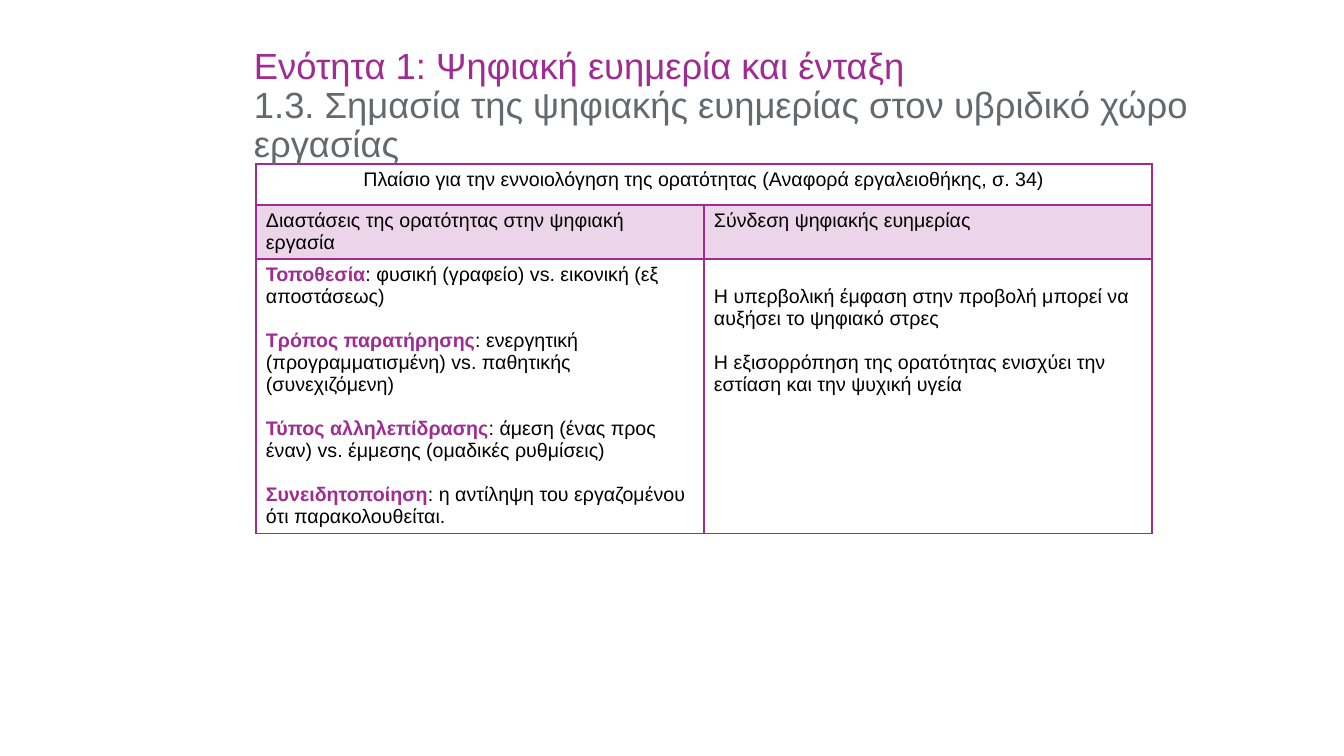
from lxml import etree
from pptx import Presentation
from pptx import util as u
from pptx.dml.color import RGBColor
from pptx.enum import text
from pptx.oxml.ns import qn

PX = 914400 / 100.8
PURPLE, GREY, BLACK, WHITE, LILAC = "A02B93", "636A6F", "000000", "FFFFFF", "ECD5E9"


def px(length):
    return u.Emu(round(length * PX))


def add_run(paragraph, wording, size, color, bold=False):
    run = paragraph.add_run()
    run.text = wording
    font_values = {"name": "Arial", "size": u.Pt(size), "bold": bold}
    for key, value in font_values.items():
        setattr(run.font, key, value)
    run.font.color.rgb = RGBColor.from_string(color)


prs = Presentation()
prs.slide_width, prs.slide_height = px(1344), px(756)
slide = prs.slides.add_slide(prs.slide_layouts[6])

# Visibility framework: each cell holds paragraphs of (purple term, plain wording)
framework = [
    [[("", "Πλαίσιο για την εννοιολόγηση της ορατότητας (Αναφορά εργαλειοθήκης, σ. 34)")], []],
    [[("", "Διαστάσεις της ορατότητας στην ψηφιακή εργασία")],
     [("", "Σύνδεση ψηφιακής ευημερίας")]],
    [[("Τοποθεσία", ": φυσική (γραφείο) vs. εικονική (εξ αποστάσεως)"),
      ("Τρόπος παρατήρησης", ": ενεργητική (προγραμματισμένη) vs. παθητικής (συνεχιζόμενη)"),
      ("Τύπος αλληλεπίδρασης", ": άμεση (ένας προς έναν) vs. έμμεσης (ομαδικές ρυθμίσεις)"),
      ("Συνειδητοποίηση", ": η αντίληψη του εργαζομένου ότι παρακολουθείται.")],
     [("", "Η υπερβολική έμφαση στην προβολή μπορεί να αυξήσει το ψηφιακό στρες"),
      ("", "Η εξισορρόπηση της ορατότητας ενισχύει την εστίαση και την ψυχική υγεία")]],
]
row_fills = [WHITE, LILAC, WHITE]
row_height = 41  # rows grow to fit their text
table = slide.shapes.add_table(3, 2, px(256), px(164), px(896), px(3 * row_height)).table
for column in table.columns:
    column.width = px(448)
table.cell(0, 0).merge(table.cell(0, 1))

for r, row in enumerate(framework):
    table.rows[r].height = px(row_height)
    for c, entries in enumerate(row):
        cell = table.cell(r, c)
        cell.margin_left = cell.margin_right = px(10)
        cell.margin_top = px(27 if (r, c) == (2, 1) else 5)
        cell.margin_bottom = px(5)
        for i, (term, wording) in enumerate(entries):
            entry = cell.text_frame.add_paragraph() if i else cell.text_frame.paragraphs[0]
            if i:
                entry.space_before = u.Pt(15.7)
            if r == 0:
                entry.alignment = text.PP_ALIGN.CENTER
            if term:
                add_run(entry, term, 14, PURPLE, bold=True)
            add_run(entry, wording, 14, BLACK)

        properties = cell._tc.get_or_add_tcPr()
        for side in "LRTB":
            under_title = (r, side) in ((0, "B"), (1, "T"))
            border = etree.SubElement(properties, qn(f"a:ln{side}"), w=str(u.Pt(2 if under_title else 1)))
            paint = etree.SubElement(border, qn("a:solidFill"))
            etree.SubElement(paint, qn("a:srgbClr"), val=PURPLE)
        cell.fill.solid()
        cell.fill.fore_color.rgb = RGBColor.from_string(row_fills[r])

# Heading, in front of the table so its last line stays whole
heading = slide.shapes.add_textbox(px(244), px(43), px(1087), px(103)).text_frame
heading.word_wrap = True
heading_lines = [
    ("Ενότητα 1: Ψηφιακή ευημερία και ένταξη", PURPLE),
    ("1.3. Σημασία της ψηφιακής ευημερίας στον υβριδικό χώρο εργασίας", GREY),
]
for i, (wording, color) in enumerate(heading_lines):
    line = heading.add_paragraph() if i else heading.paragraphs[0]
    line.line_spacing = 0.9
    add_run(line, wording, 26, color)

prs.save("out.pptx")
